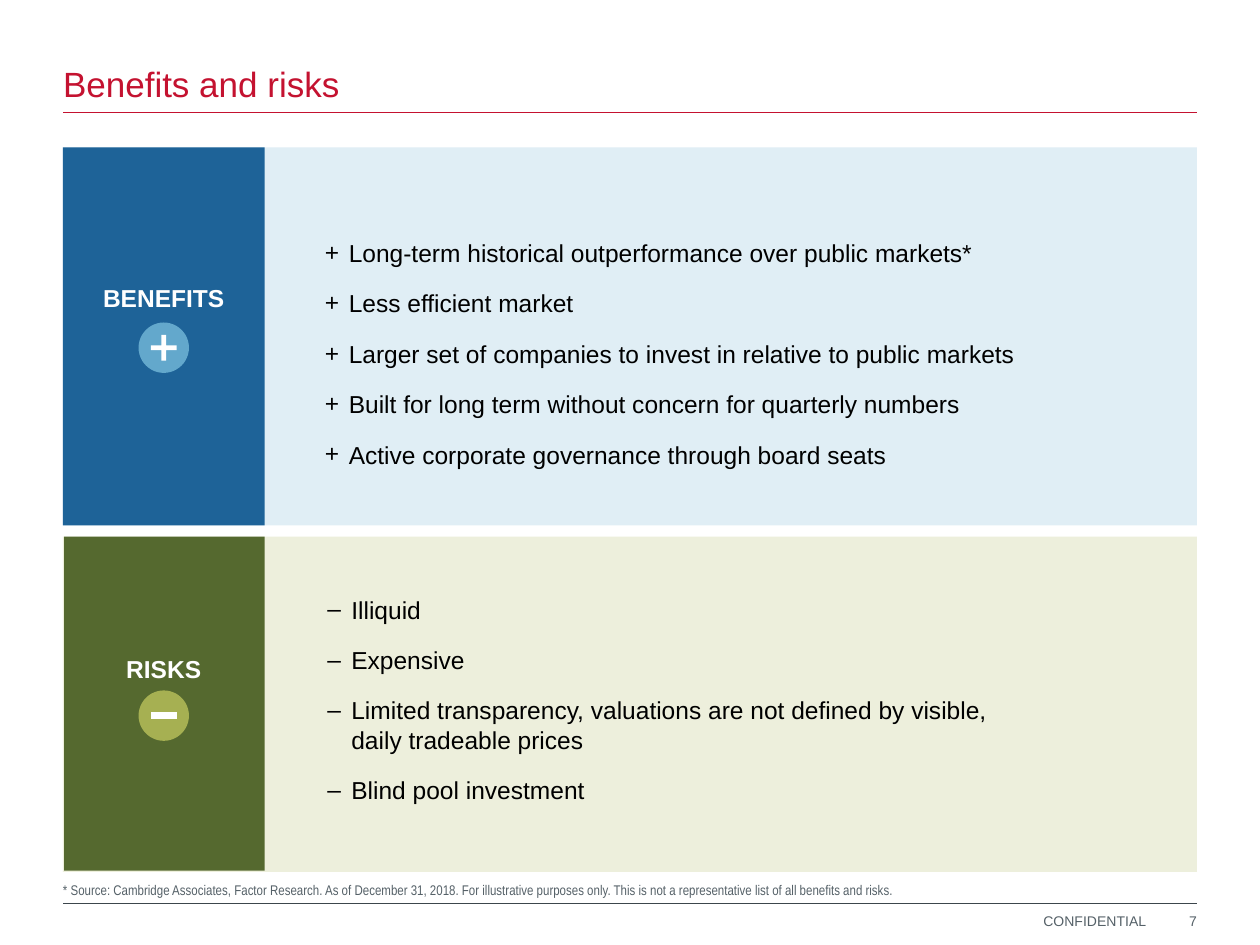
from lxml import etree
from pptx import Presentation
from pptx.dml.color import RGBColor
from pptx.enum.shapes import MSO_CONNECTOR, MSO_SHAPE
from pptx.enum.text import MSO_ANCHOR, PP_ALIGN
from pptx.oxml.ns import qn
from pptx.util import Inches, Pt

RECTANGLE, OVAL = MSO_SHAPE.RECTANGLE, MSO_SHAPE.OVAL
PLUS, MINUS = MSO_SHAPE.MATH_PLUS, MSO_SHAPE.MATH_MINUS
STRAIGHT = MSO_CONNECTOR.STRAIGHT
TOP, MIDDLE, BOTTOM = MSO_ANCHOR.TOP, MSO_ANCHOR.MIDDLE, MSO_ANCHOR.BOTTOM
LEFT, CENTER, RIGHT = PP_ALIGN.LEFT, PP_ALIGN.CENTER, PP_ALIGN.RIGHT

RED, SLATE, DARK, WHITE, BLACK = "C41230", "556168", "3C464C", "FFFFFF", "000000"
MARGIN, CONTENT_WIDTH = 0.5, 9
INDENT = 0.19

BENEFITS = [
    "Long-term historical outperformance over public markets*",
    "Less efficient market",
    "Larger set of companies to invest in relative to public markets",
    "Built for long term without concern for quarterly numbers",
    "Active corporate governance through board seats",
]
RISKS = [
    "Illiquid",
    "Expensive",
    "Limited transparency, valuations are not defined by visible, daily tradeable prices",
    "Blind pool investment",
]
SOURCE = (
    "* Source: Cambridge Associates, Factor Research. As of December 31, 2018. "
    "For illustrative purposes only. This is not a representative list of all "
    "benefits and risks."
)


def color(value):
    return RGBColor.from_string(value)


def add_bullet(para, bullet):
    properties = para._p.get_or_add_pPr()
    properties.set("marL", str(Inches(INDENT)))
    properties.set("indent", str(-Inches(INDENT)))
    bullet_color = etree.SubElement(properties, qn("a:buClr"))
    etree.SubElement(bullet_color, qn("a:srgbClr")).set("val", BLACK)
    etree.SubElement(properties, qn("a:buFont")).set("typeface", "Arial")
    etree.SubElement(properties, qn("a:buChar")).set("char", bullet)


def add_text(page, box, lines, size=14, font="Arial", fill=BLACK, bold=False,
             align=LEFT, anchor=TOP, insets=(0, 0), wrap=True, bullet=None,
             gap=None, spacing=None):
    """Place one paragraph per line; insets are horizontal and vertical."""
    frame = page.shapes.add_textbox(*map(Inches, box)).text_frame
    frame.word_wrap = wrap
    frame.vertical_anchor = anchor
    frame.margin_left = frame.margin_right = Inches(insets[0])
    frame.margin_top = frame.margin_bottom = Inches(insets[1])
    for number, line in enumerate(lines):
        para = frame.add_paragraph() if number else frame.paragraphs[0]
        para.alignment = align
        if gap is not None:
            para.space_after = Pt(gap)
        if spacing is not None:
            para.line_spacing = spacing
        if bullet:
            add_bullet(para, bullet)
        span = para.add_run()
        span.text = line
        span.font.size = Pt(size)
        span.font.name = font
        span.font.bold = bold
        span.font.color.rgb = color(fill)


def add_block(page, kind, box, fill):
    shape = page.shapes.add_shape(kind, *map(Inches, box))
    shape.shadow.inherit = False
    shape.fill.solid()
    shape.fill.fore_color.rgb = color(fill)
    shape.line.fill.background()
    return shape


def add_rule(page, top, fill):
    rule = page.shapes.add_connector(
        STRAIGHT, Inches(MARGIN), Inches(top),
        Inches(MARGIN + CONTENT_WIDTH), Inches(top))
    rule.line.color.rgb = color(fill)
    rule.line.width = Pt(0.5)
    etree.SubElement(rule._element.spPr, qn("a:effectLst"))


def add_header(page, box):
    add_text(page, box, ["Benefits and risks"], size=20, fill=RED,
             anchor=BOTTOM, insets=(0, 0.05), spacing=0.95)
    add_rule(page, box[1] + box[3], RED)


def add_badge(page, box, fill, sign, sign_height):
    """Draw a disc with a sign in its middle."""
    left, top, width, height = box
    sign_width = 0.28
    add_block(page, OVAL, box, fill)
    return add_block(page, sign, (left + (width - sign_width) / 2,
                                  top + (height - sign_height) / 2,
                                  sign_width, sign_height), WHITE)


def add_panel(page, box, tab_box, pale, strong, label, label_top):
    """Draw a pale band with a strong labelled tab at its left."""
    add_block(page, RECTANGLE, box, pale)
    add_block(page, RECTANGLE, tab_box, strong)
    add_text(page, (0.7, label_top, 1.2, 0.34), [label], fill=WHITE, bold=True,
             align=CENTER, insets=(0.1, 0.05), wrap=False)


def add_points(page, box, points, bullet):
    add_text(page, box, points, bullet=bullet, gap=12, insets=(0.1, 0.05))


def add_footer(page, top):
    add_text(page, (MARGIN, top - 0.68, CONTENT_WIDTH, 0.64), [SOURCE], size=8,
             font="Arial Narrow", fill=SLATE, anchor=BOTTOM)
    add_rule(page, top, DARK)
    add_text(page, (8.28, top + 0.07, 0.82, 0.13), ["CONFIDENTIAL"], size=8,
             fill=SLATE, wrap=False)
    add_text(page, (8.78, top + 0.05, 0.72, 0.18), ["7"], size=8, fill=SLATE,
             align=RIGHT, anchor=MIDDLE)


def main():
    deck = Presentation()
    deck.slide_width, deck.slide_height = Inches(10), Inches(7.5)
    page = deck.slides.add_slide(deck.slide_layouts[6])

    add_header(page, (MARGIN, 0.11, 7.09, 0.78))

    # Benefits
    add_panel(page, (MARGIN, 1.17, CONTENT_WIDTH, 3), (MARGIN, 1.17, 1.6, 3),
              "E0EEF5", "1E6398", "BENEFITS", 2.2)
    plus = add_badge(page, (1.1, 2.56, 0.4, 0.4), "63A8CC", PLUS, 0.28)
    plus.adjustments[0] = 0.14
    add_points(page, (2.48, 1.84, 6, 1.95), BENEFITS, "+")

    # Risks
    add_panel(page, (MARGIN, 4.26, CONTENT_WIDTH, 2.66), (0.51, 4.26, 1.59, 2.65),
              "EDEFDC", "55692F", "RISKS", 5.14)
    add_badge(page, (1.1, 5.48, 0.4, 0.4), "A6B052", MINUS, 0.22)
    add_points(page, (2.5, 4.67, 5.48, 1.78), RISKS, "–")

    add_footer(page, 7.17)
    deck.save("out.pptx")


if __name__ == "__main__":
    main()
